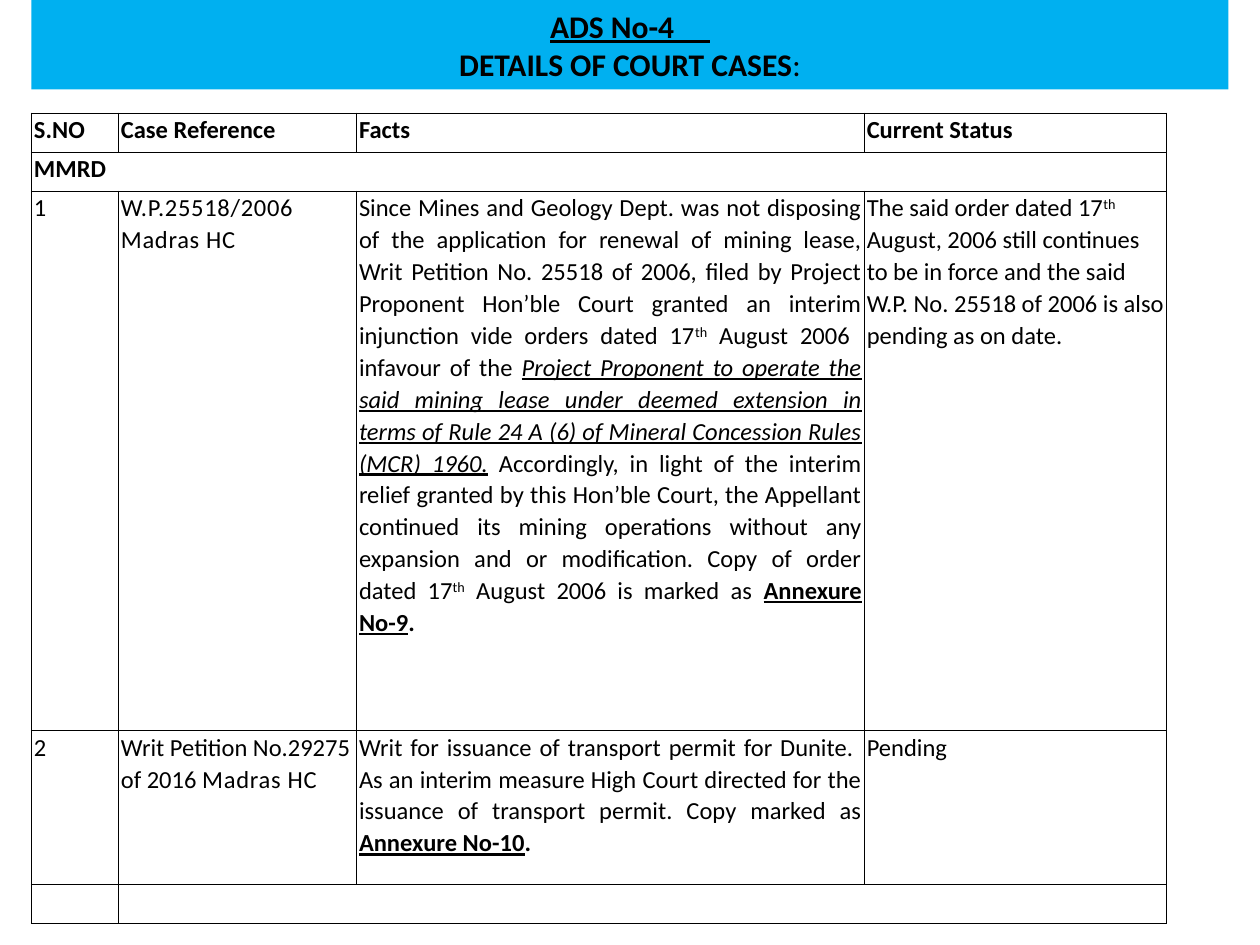
from lxml import etree
from pptx import Presentation
from pptx.dml.color import RGBColor
from pptx.enum.shapes import MSO_SHAPE
from pptx.enum.text import MSO_ANCHOR, PP_ALIGN
from pptx.oxml.ns import qn
from pptx.util import Inches, Pt

RECT = MSO_SHAPE.RECTANGLE
MIDDLE = MSO_ANCHOR.MIDDLE
LEFT, CENTER, JUSTIFY = PP_ALIGN.LEFT, PP_ALIGN.CENTER, PP_ALIGN.JUSTIFY

THEME = {
    "font": "Calibri", "title": 18, "body": 14, "line": 1,
    "ink": "000000", "banner": "00B0F0",
}
STYLES = {
    "plain": {},
    "bold": {"bold": True},
    "rule": {"italic": True, "underline": True},
    "link": {"bold": True, "underline": True},
}
EXTRAS = {"sup": {"baseline": "30000"}, "wide": {"spc": "40"}}

TITLE = [
    [("ADS No-4     ", "link")],
    [("DETAILS OF COURT CASES", "bold"), (":", "plain")],
]
HEADERS = ["S.NO", "Case Reference", "Facts", "Current Status"]
FACTS_1 = [
    ("Since Mines and Geology Dept. was not disposing of the application for "
     "renewal of mining lease, Writ Petition No. 25518 of 2006, filed by "
     "Project Proponent Hon’ble Court granted an interim injunction vide "
     "orders dated 17", "plain"),
    ("th", "sup"),
    (" August 2006  infavour of the ", "plain"),
    ("Project Proponent to operate the said mining lease under deemed "
     "extension in terms of Rule 24 A (6) of Mineral Concession Rules "
     "(MCR) 1960.", "rule"),
    (" Accordingly, in light of the interim relief granted by this Hon’ble "
     "Court, the Appellant continued its mining operations without any "
     "expansion and or modification. Copy of order dated 17", "plain"),
    ("th", "sup"),
    (" August 2006 is marked as ", "plain"),
    ("Annexure No-9", "link"),
    (".", "bold"),
]
STATUS_1 = [
    ("The said order dated 17", "plain"),
    ("th", "sup"),
    (" August, 2006 still continues to be in force and the said W.P. No. "
     "25518 of 2006 is also pending as on date.", "plain"),
]
FACTS_2 = [
    ("Writ for issuance of transport permit for Dunite.  As an interim "
     "measure High Court directed for the issuance of transport permit. "
     "Copy marked as ", "plain"),
    ("Annexure No-10", "link"),
    (".", "bold"),
]
ROWS = [
    [[(h, "bold")] for h in HEADERS],
    [[("MMRD", "bold")]],
    [[("1", "plain")], [("W.P.25518/2006 Madras HC", "wide")], FACTS_1, STATUS_1],
    [[("2", "plain")],
     [("Writ Petition No.29275 of 2016 ", "plain"), ("Madras HC", "wide")],
     FACTS_2, [("Pending ", "plain")]],
    [],
]
MERGES = [((1, 0), (1, 3)), ((4, 1), (4, 3))]
JUSTIFIED = {(2, 2), (3, 2), (3, 3)}
ROOMY = JUSTIFIED | {(2, 3)}

W, H = 10, 7.5
MARGIN = W / 40
BANNER_H = 0.71
TABLE_TOP = H * 0.12
COLS = [0.69, 1.89, 4.03, 2.4]
HEIGHTS = [0.31, 0.31, 4.28, 1.22, 0.31]
CELL_FORMAT = {
    "margin_left": Inches(0.02), "margin_right": Inches(0.02),
    "margin_top": 0, "margin_bottom": 0,
}


def apply(obj, values):
    for name, value in values.items():
        setattr(obj, name, value)


def write(p, runs, size, para):
    apply(p, para)
    for text, style in runs:
        r = p.add_run()
        r.text = text
        base = {"name": THEME["font"], "size": Pt(size), "bold": False}
        apply(r.font, base | STYLES.get(style, {}))
        r.font.color.rgb = RGBColor.from_string(THEME["ink"])
        for name, value in EXTRAS.get(style, {}).items():
            r._r.get_or_add_rPr().set(name, value)


def add_borders(cell):
    tc_pr = cell._tc.get_or_add_tcPr()
    for side in ("lnL", "lnR", "lnT", "lnB"):
        ln = etree.SubElement(tc_pr, qn("a:" + side), w=str(Pt(THEME["line"])))
        fill = etree.SubElement(ln, qn("a:solidFill"))
        etree.SubElement(fill, qn("a:srgbClr"), val=THEME["ink"])


def add_banner(slide):
    sp = slide.shapes.add_shape(
        RECT, Inches(MARGIN), 0, Inches(W - 2 * MARGIN), Inches(BANNER_H))
    sp.shadow.inherit = False
    sp.fill.solid()
    sp.fill.fore_color.rgb = RGBColor.from_string(THEME["banner"])
    sp.line.fill.background()
    tf = sp.text_frame
    apply(tf, {"word_wrap": True, "vertical_anchor": MIDDLE})
    for i, runs in enumerate(TITLE):
        p = tf.add_paragraph() if i else tf.paragraphs[0]
        write(p, runs, THEME["title"], {"alignment": CENTER})


def add_cases(slide):
    table = slide.shapes.add_table(
        len(HEIGHTS), len(COLS), Inches(MARGIN), Inches(TABLE_TOP),
        Inches(sum(COLS)), Inches(sum(HEIGHTS))).table
    apply(table, {"first_row": False, "horz_banding": False})
    for col, width in zip(table.columns, COLS):
        col.width = Inches(width)
    for row, height in zip(table.rows, HEIGHTS):
        row.height = Inches(height)
    for cell in table.iter_cells():
        apply(cell, CELL_FORMAT)
        add_borders(cell)
        cell.fill.background()
    for i, row in enumerate(ROWS):
        for j, runs in enumerate(row):
            para = {
                "alignment": JUSTIFY if (i, j) in JUSTIFIED else LEFT,
                "line_spacing": 1.07,
                "space_after": Pt(12 if (i, j) in ROOMY else 8),
            }
            p = table.cell(i, j).text_frame.paragraphs[0]
            write(p, runs, THEME["body"], para)
    for start, end in MERGES:
        table.cell(*start).merge(table.cell(*end))


def main():
    prs = Presentation()
    apply(prs, {"slide_width": Inches(W), "slide_height": Inches(H)})
    slide = prs.slides.add_slide(prs.slide_layouts[6])
    add_banner(slide)
    add_cases(slide)
    prs.save("out.pptx")


if __name__ == "__main__":
    main()
